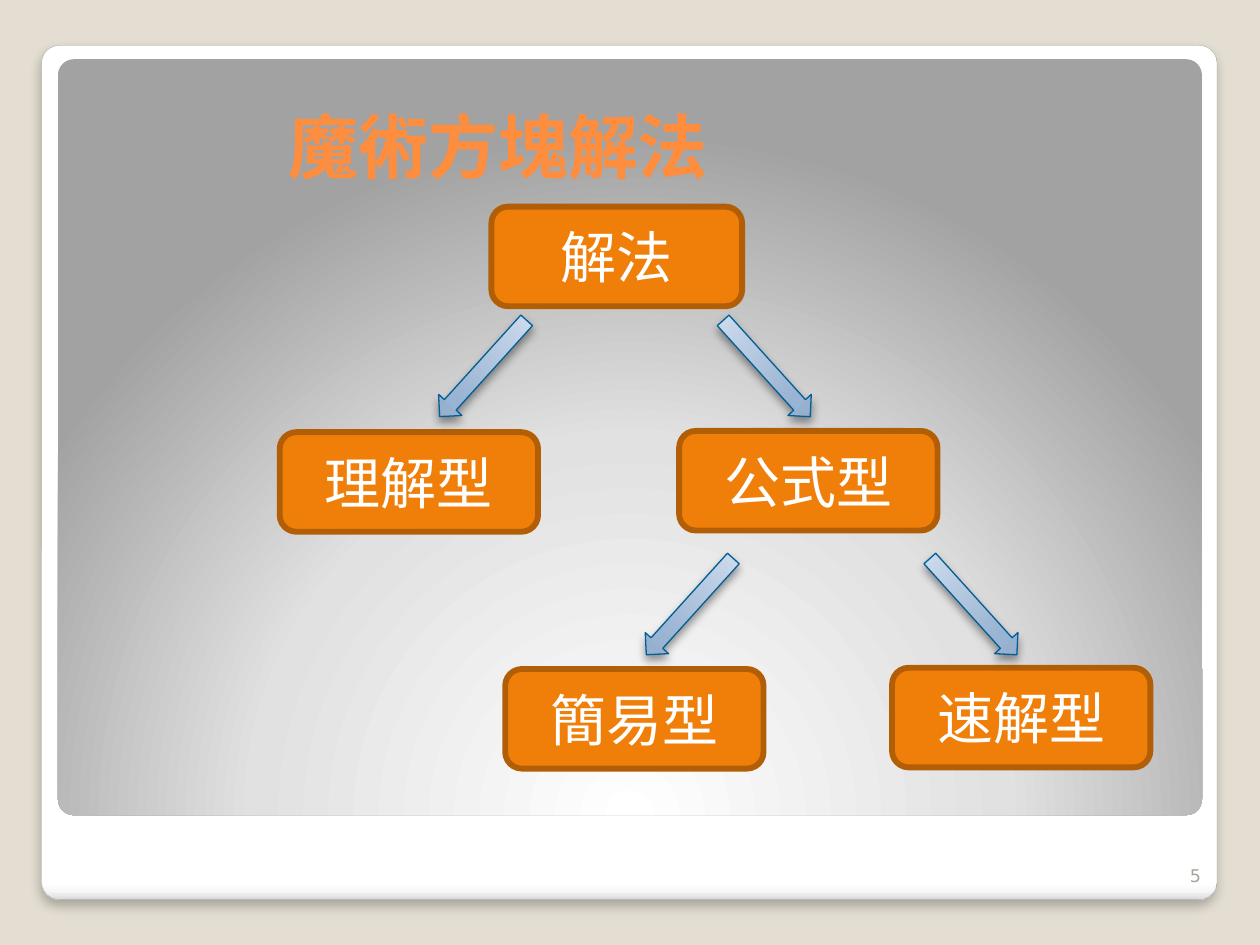
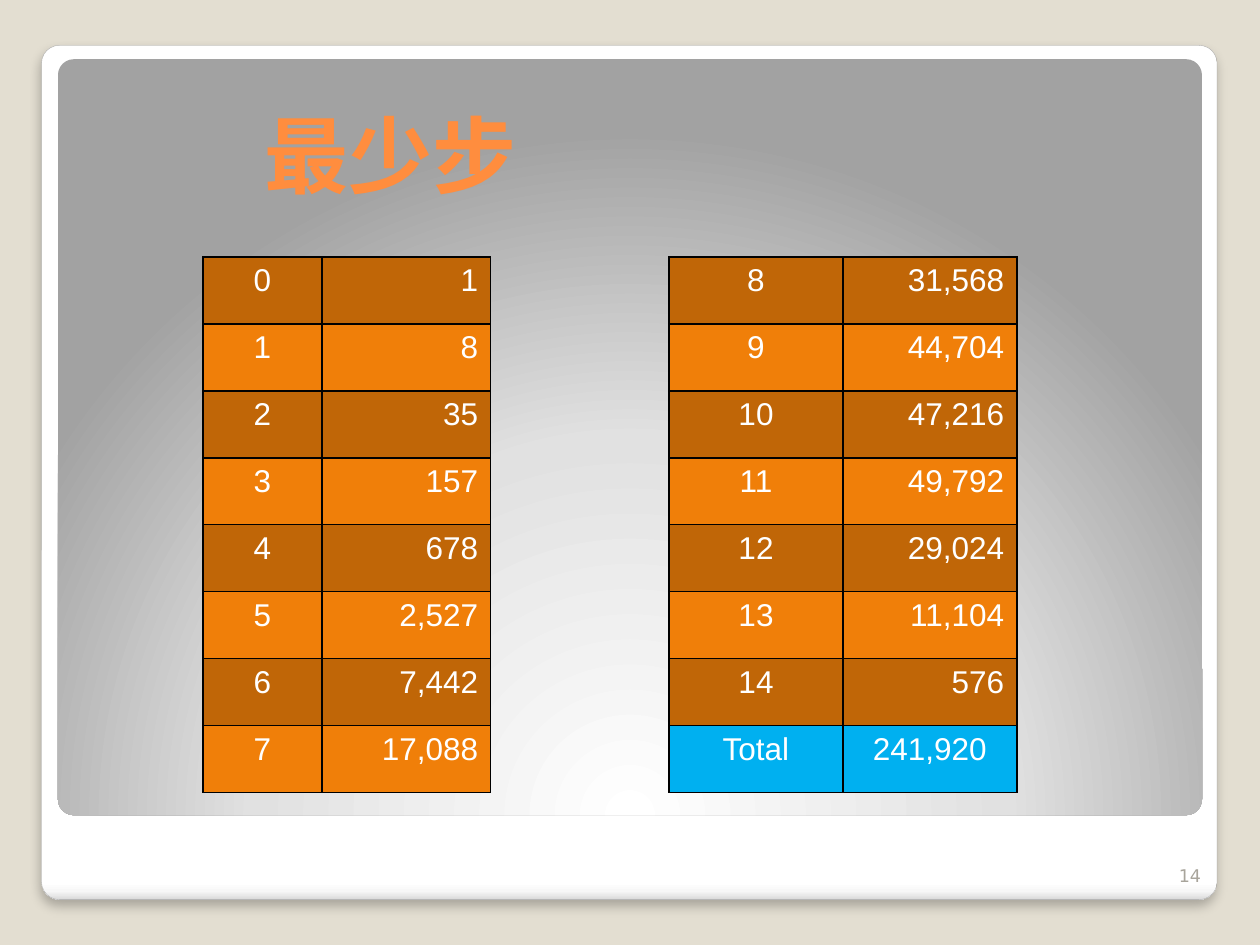
import pptx
import pptx.dml.color
import pptx.enum.shapes
import pptx.enum.text
import pptx.oxml
import pptx.oxml.ns
import pptx.util

RGB = pptx.dml.color.RGBColor
SHAPE = pptx.enum.shapes.MSO_SHAPE
ALIGN = pptx.enum.text.PP_ALIGN
ANCHOR = pptx.enum.text.MSO_ANCHOR
Pt = pptx.util.Pt

SAND = RGB(0xE3, 0xDE, 0xD1)
WHITE = RGB(0xFF, 0xFF, 0xFF)
BLACK = RGB(0x00, 0x00, 0x00)
CARD_EDGE = RGB(0xA4, 0xA4, 0xA4)
TITLE_ORANGE = RGB(0xFF, 0x8D, 0x3E)
NUMBER_GREY = RGB(0xA8, 0xA4, 0x9B)
ORANGE = RGB(0xF0, 0x7F, 0x09)
DARK_ORANGE = RGB(0xC0, 0x66, 0x07)
NODE_EDGE = RGB(0xB2, 0x5E, 0x07)
ARROW_EDGE = RGB(0x03, 0x5E, 0x94)
TOTAL_BLUE = RGB(0x00, 0xB0, 0xF0)

CARD = {
    "stops": [(0, "FFFFFF"), (98, "FFFFFF"), (99, "F7F7F7"), (100, "DADADA")],
    "shade": '<a:lin ang="5400000" scaled="0"/>',
    "edge": (CARD_EDGE, 0.16),
    "shadow": (25, 6, 4),
}
PANEL = {
    "stops": [(0, "FFFFFF"), (55, "E1E1E1"), (100, "A2A2A2")],
    "shade": '<a:path path="circle"><a:fillToRect l="50000" t="175000" r="50000" b="-75000"/></a:path>',
    "edge": None,
    "shadow": None,
}
ARROW = {
    "stops": [(0, "90ABCB"), (25, "99B3D2"), (100, "D1DEEE")],
    "shade": '<a:lin ang="16200000" scaled="0"/>',
    "edge": (ARROW_EDGE, 0.75),
    "shadow": (40, 5.2, 3),
}
NUMBER_FONT = {"size": Pt(10), "name": "DejaVu Sans"}
NODE_FONT = {"size": Pt(32), "name": "DejaVu Sans"}
CELL_FONT = {"size": Pt(18), "name": "Arial"}

NS = pptx.oxml.ns.nsdecls("a")

deck = pptx.Presentation()
deck.slide_width = pptx.util.Inches(10)
deck.slide_height = pptx.util.Inches(7.5)
column = deck.slide_width / 100
row = deck.slide_height / 75
grid = (column, row, column, row)


def write(frame, text, color, formats, align, anchor):
    frame.word_wrap = True
    frame.vertical_anchor = anchor
    paragraph = frame.paragraphs[0]
    paragraph.alignment = align
    run = paragraph.add_run()
    run.text = text
    for key, value in formats.items():
        setattr(run.font, key, value)
    run.font.color.rgb = color


def add_shaded(slide, kind, area, look):
    shaded = slide.shapes.add_shape(kind, *[int(unit * n) for unit, n in zip(grid, area)])
    shaded.shadow.inherit = False
    if look["edge"]:
        shaded.line.color.rgb = look["edge"][0]
        shaded.line.width = Pt(look["edge"][1])
    else:
        shaded.line.fill.background()
    stops = "".join(
        f'<a:gs pos="{share * 1000}"><a:srgbClr val="{color}"/></a:gs>' for share, color in look["stops"]
    )
    properties = shaded._element.spPr
    properties.find(pptx.oxml.ns.qn("a:prstGeom")).addnext(pptx.oxml.parse_xml(
        f'<a:gradFill {NS} rotWithShape="1"><a:gsLst>{stops}</a:gsLst>{look["shade"]}</a:gradFill>'
    ))
    if look["shadow"]:
        alpha, blur, distance = look["shadow"]
        properties.find(pptx.oxml.ns.qn("a:effectLst")).append(pptx.oxml.parse_xml(
            f'<a:outerShdw {NS} blurRad="{Pt(blur)}" dist="{Pt(distance)}" dir="5400000" rotWithShape="0">'
            f'<a:srgbClr val="000000"><a:alpha val="{alpha * 1000}"/></a:srgbClr></a:outerShdw>'
        ))
    return shaded


pages = []
for title, title_left, title_top, title_size, number in [
    ("魔術方塊解法", 21.9, 3.9, 40, "5"),
    ("最少步", 20, 5.2, 48, "14"),
]:
    slide = deck.slides.add_slide(deck.slide_layouts[6])
    slide.background.fill.solid()
    slide.background.fill.fore_color.rgb = SAND
    for area, look in [((3.3, 3.6, 93.3, 67.8), CARD), ((4.6, 4.7, 90.8, 60), PANEL)]:
        add_shaded(slide, SHAPE.ROUNDED_RECTANGLE, area, look).adjustments[0] = 0.021
    title_font = {"size": Pt(title_size), "name": "DejaVu Sans", "bold": True}
    for area, text, color, formats, align in [
        ((title_left, title_top, 73.9, 11.5), title, TITLE_ORANGE, title_font, ALIGN.LEFT),
        ((91.3, 66.8, 5, 4), number, NUMBER_GREY, NUMBER_FONT, ALIGN.RIGHT),
    ]:
        caption = slide.shapes.add_textbox(*[int(unit * n) for unit, n in zip(grid, area)])
        write(caption.text_frame, text, color, formats, align, ANCHOR.BOTTOM)
    pages.append(slide)

methods, fewest_moves = pages

for method, left, top, width in [
    ("理解型", 22.2, 34.3, 20.5),
    ("解法", 39, 16.4, 19.9),
    ("公式型", 53.9, 34.2, 20.5),
    ("簡易型", 40.1, 53.1, 20.5),
    ("速解型", 70.8, 53, 20.5),
]:
    area = (left, top, width, 7.9)
    node = methods.shapes.add_shape(
        SHAPE.ROUNDED_RECTANGLE, *[int(unit * n) for unit, n in zip(grid, area)]
    )
    node.shadow.inherit = False
    node.fill.solid()
    node.fill.fore_color.rgb = ORANGE
    node.line.color.rgb = NODE_EDGE
    node.line.width = Pt(3.35)
    write(node.text_frame, method, WHITE, NODE_FONT, ALIGN.CENTER, ANCHOR.MIDDLE)

for branch_left, branch_top in [(37.1, 24.1), (53.5, 43)]:
    for side, angle in enumerate((42.1, 317.9)):
        branch = add_shaded(
            methods, SHAPE.DOWN_ARROW, (branch_left + 22.5 * side, branch_top, 2.5, 10.3), ARROW
        )
        branch.rotation = angle

move_counts = [
    ("0", "1"), ("1", "8"), ("2", "35"), ("3", "157"),
    ("4", "678"), ("5", "2,527"), ("6", "7,442"), ("7", "17,088"),
    ("8", "31,568"), ("9", "44,704"), ("10", "47,216"), ("11", "49,792"),
    ("12", "29,024"), ("13", "11,104"), ("14", "576"), ("Total", "241,920"),
]
for left, widths, counts in [
    (16.1, (9.45, 13.4), move_counts[:8]),
    (53.1, (13.8, 13.8), move_counts[8:]),
]:
    area = (left, 20.4, sum(widths), 42.5)
    tally = fewest_moves.shapes.add_table(
        len(counts), 2, *[int(unit * n) for unit, n in zip(grid, area)]
    ).table
    for index, width in enumerate(widths):
        tally.columns[index].width = int(column * width)
    for line, entry in enumerate(counts):
        is_total = entry[0] == "Total"
        band = TOTAL_BLUE if is_total else (DARK_ORANGE, ORANGE)[line % 2]
        for index, text in enumerate(entry):
            cell = tally.cell(line, index)
            for side in "LRTB":
                cell._tc.get_or_add_tcPr().append(pptx.oxml.parse_xml(
                    f'<a:ln{side} {NS} w="{Pt(1)}"><a:solidFill><a:srgbClr val="{BLACK}"/>'
                    f"</a:solidFill></a:ln{side}>"
                ))
            cell.fill.solid()
            cell.fill.fore_color.rgb = band
            align = ALIGN.RIGHT if index == 1 and not is_total else ALIGN.CENTER
            write(cell.text_frame, text, WHITE, CELL_FONT, align, ANCHOR.TOP)

deck.save("out.pptx")
